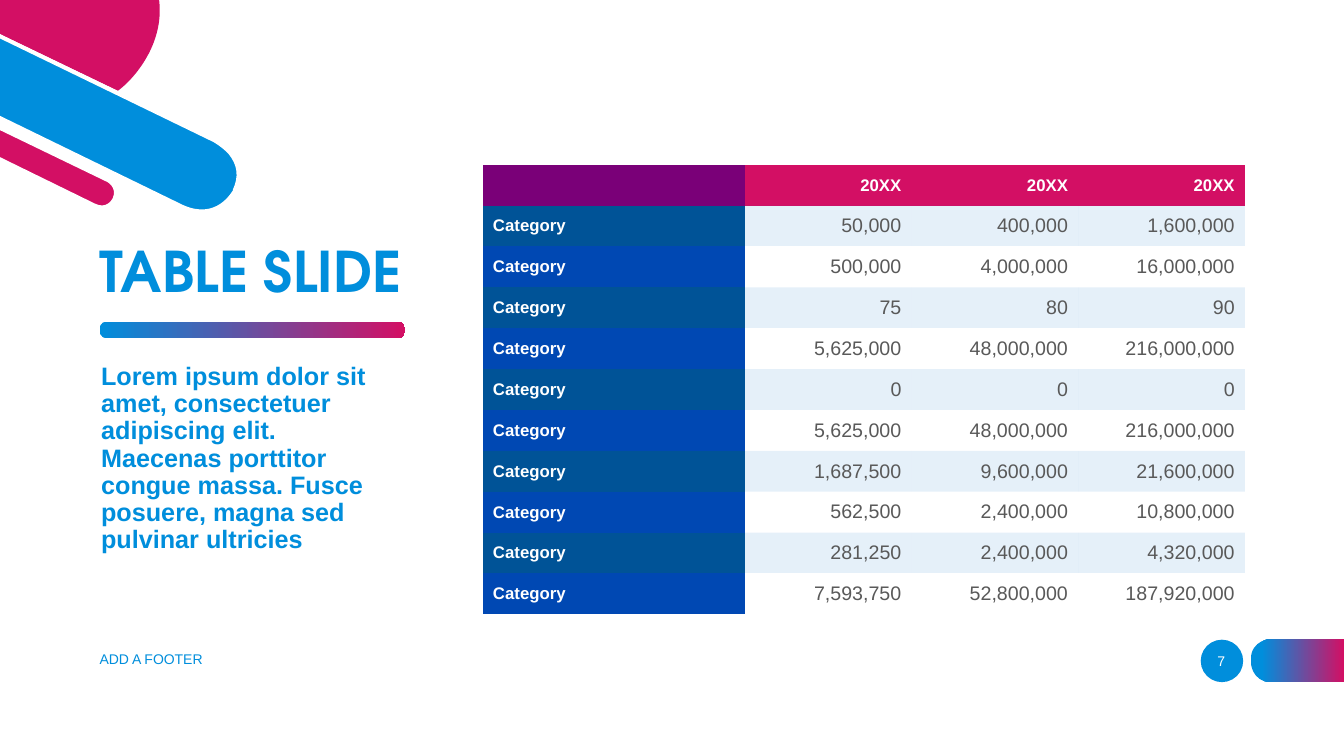
from dataclasses import dataclass
from typing import Optional

from lxml.etree import Element, SubElement
from pptx import Presentation
from pptx.dml.color import RGBColor
from pptx.dml.fill import FillFormat
from pptx.enum.shapes import MSO_SHAPE as Preset
from pptx.enum.text import MSO_ANCHOR as Anchor, PP_ALIGN as Align
from pptx.oxml.ns import qn
from pptx.util import Cm, Pt

COLOURS = {
    "blue": "008EDC", "crimson": "D30F64", "white": "FFFFFF", "purple": "7A0078",
    "teal": "005397", "royal": "0048B3", "tint": "006FC9", "grey": "595959",
}
NO_GRID_STYLE = "{2D5ABB26-0587-4C30-8999-92F81FD0307C}"


@dataclass
class Outline:
    """Steps in cm: two numbers draw a line, six a cubic curve."""
    start: tuple
    steps: list
    colour: Optional[str] = None  # None gives the blue to crimson gradient


@dataclass
class Label:
    text: str
    box: tuple  # left, top, width, height in cm
    size: int
    colour: Optional[str] = "blue"
    bold: bool = False
    font: str = "Arial"
    anchor: Anchor = Anchor.MIDDLE
    align: Align = Align.LEFT
    line_spacing: float = 1.0
    space_before: int = 0


CORNER = [
    # Blue bar
    Outline((5.38, 3.53), [
        (5.38, 3.53, 6.32, 3.99, 5.92, 4.8), (5.89, 4.83),
        (5.89, 4.83, 5.49, 5.64, 4.57, 5.18), (0, 2.97), (0, 0.91)], "blue"),
    # Crimson disc
    Outline((3.71, 1.42), [
        (3.71, 1.42, 3.45, 1.93, 2.97, 2.29), (0, 0.86), (0, 0), (4.01, 0),
        (4.06, 0.38, 4.01, 0.84, 3.75, 1.35)], "crimson"),
    # Crimson bar
    Outline((0, 3.2), [
        (2.69, 4.52), (2.69, 4.52, 3.05, 4.7, 2.9, 5), (2.9, 5.03),
        (2.9, 5.03, 2.72, 5.36, 2.36, 5.18), (0, 4.01)], "crimson"),
    # White rim of the crimson bar
    Outline((2.39, 5.13), [
        (2.69, 5.28, 2.82, 5.03, 2.84, 5), (2.97, 4.72, 2.69, 4.57, 2.67, 4.57),
        (0, 3.28), (0, 3.15), (2.72, 4.47),
        (2.72, 4.47, 2.92, 4.57, 2.97, 4.75), (3, 4.85, 3, 4.95, 2.95, 5.05),
        (2.9, 5.16, 2.77, 5.28, 2.57, 5.28), (2.51, 5.28, 2.44, 5.28, 2.36, 5.23),
        (0, 4.09), (0, 3.96)], "white"),
    # White rim of the blue bar
    Outline((4.6, 5.16), [
        (5.46, 5.56, 5.84, 4.83, 5.87, 4.8), (5.87, 4.78),
        (6.02, 4.45, 5.99, 4.17, 5.77, 3.89), (5.61, 3.71, 5.38, 3.58, 5.38, 3.58),
        (0, 0.97), (0, 0.86), (5.44, 3.48),
        (5.44, 3.51, 5.89, 3.71, 6.02, 4.14), (6.1, 4.34, 6.07, 4.57, 5.97, 4.83),
        (5.94, 4.85), (5.94, 4.85, 5.66, 5.38, 5.11, 5.38),
        (4.93, 5.38, 4.75, 5.33, 4.55, 5.23), (0, 3.02), (0, 2.92)], "white"),
]
NUMBER_TAB = Outline((32.05, 17.19), [
    (33.87, 17.19), (33.87, 16.1), (32.05, 16.1),
    (32.05, 16.1, 31.52, 16.1, 31.52, 16.64), (31.52, 16.66),
    (31.52, 16.66, 31.52, 17.19, 32.05, 17.19)])

LABELS = [
    Label("TABLE SLIDE", (2.26, 5.92, 9.45, 1.88), 40, None, True,
          "TeX Gyre Adventor", Anchor.BOTTOM, line_spacing=0.9),
    Label("Lorem ipsum dolor sit amet, consectetuer adipiscing elit. Maecenas "
          "porttitor congue massa. Fusce posuere, magna sed pulvinar ultricies",
          (2.3, 9.04, 7.85, 5.13), 18, bold=True, anchor=Anchor.TOP,
          line_spacing=0.9, space_before=10),
    Label("ADD A FOOTER", (2.26, 16.1, 11.43, 1.02), 10),
    Label("7", (30.02, 16.15, 1.52, 1.02), 10, "white", align=Align.CENTER),
]

ROWS = [
    ("", "20XX", "20XX", "20XX"),
    ("Category", "50,000", "400,000", "1,600,000"),
    ("Category", "500,000", "4,000,000", "16,000,000"),
    ("Category", "75", "80", "90"),
    ("Category", "5,625,000", "48,000,000", "216,000,000"),
    ("Category", "0", "0", "0"),
    ("Category", "5,625,000", "48,000,000", "216,000,000"),
    ("Category", "1,687,500", "9,600,000", "21,600,000"),
    ("Category", "562,500", "2,400,000", "10,800,000"),
    ("Category", "281,250", "2,400,000", "4,320,000"),
    ("Category", "7,593,750", "52,800,000", "187,920,000"),
]
COLUMN_WIDTHS = [6.6, 4.2, 4.2, 4.2]
ROW_HEIGHT = 1.03


def paint(fill: FillFormat, colour: Optional[str], blue_until: float = 0) -> None:
    if colour:
        fill.solid()
        fill.fore_color.rgb = RGBColor.from_string(COLOURS[colour])
        return
    fill.gradient()
    fill.gradient_angle = 0
    stops = zip(fill.gradient_stops, ("blue", "crimson"), (blue_until, 1))
    for stop, name, position in stops:
        stop.color.rgb = RGBColor.from_string(COLOURS[name])
        stop.position = position


def finish(shape, colour: Optional[str], blue_until: float = 0) -> None:
    paint(shape.fill, colour, blue_until)
    shape.line.fill.background()
    shape.shadow.inherit = False


def draw_outline(slide, outline: Outline, blue_until: float = 0) -> None:
    builder = slide.shapes.build_freeform(*map(Cm, outline.start), scale=1.0)
    builder.add_line_segments(
        [tuple(map(Cm, step[-2:])) for step in outline.steps], close=True)
    shape = builder.convert_to_shape()
    # Turn the lines of six-number steps into curves
    segments = list(shape.element.iter(qn("a:lnTo")))
    for segment, step in zip(segments, outline.steps):
        if len(step) == 6:
            segment.tag = qn("a:cubicBezTo")
            for index in (0, 1):
                x, y = step[2 * index:2 * index + 2]
                control = Element(qn("a:pt"), x=str(Cm(x) - shape.left),
                                  y=str(Cm(y) - shape.top))
                segment.insert(index, control)
    finish(shape, outline.colour, blue_until)


def format_runs(paragraph, size: int, colour: Optional[str], bold: bool,
                font: str = "Arial") -> None:
    for run in paragraph.runs:
        run.font.size, run.font.bold, run.font.name = Pt(size), bold, font
        paint(run.font.fill, colour)


def draw_label(slide, label: Label) -> None:
    text_frame = slide.shapes.add_textbox(*map(Cm, label.box)).text_frame
    text_frame.word_wrap = True
    text_frame.vertical_anchor = label.anchor
    text_frame.text = label.text
    paragraph = text_frame.paragraphs[0]
    paragraph.alignment = label.align
    paragraph.line_spacing = label.line_spacing
    paragraph.space_before = Pt(label.space_before)
    format_runs(paragraph, label.size, label.colour, label.bold, label.font)


def cell_colour(row: int, column: int) -> str:
    if row == 0:
        return "crimson" if column else "purple"
    if column == 0:
        return "teal" if row % 2 else "royal"
    return "tint" if row % 2 else "white"


def draw_table(slide) -> None:
    frame = slide.shapes.add_table(
        len(ROWS), len(COLUMN_WIDTHS), Cm(12.17), Cm(4.15),
        Cm(sum(COLUMN_WIDTHS)), Cm(ROW_HEIGHT * len(ROWS)))
    table = frame.table
    next(frame.element.iter(qn("a:tableStyleId"))).text = NO_GRID_STYLE
    for column, width in zip(table.columns, COLUMN_WIDTHS):
        column.width = Cm(width)
    for row, values in enumerate(ROWS):
        table.rows[row].height = Cm(ROW_HEIGHT)
        for column, value in enumerate(values):
            cell = table.cell(row, column)
            colour = cell_colour(row, column)
            paint(cell.fill, colour)
            if colour == "tint":
                tint = next(cell._tc.tcPr.iter(qn("a:srgbClr")))
                SubElement(tint, qn("a:alpha")).set("val", "10000")
            cell.vertical_anchor = Anchor.MIDDLE
            cell.text_frame.text = value
            paragraph = cell.text_frame.paragraphs[0]
            paragraph.alignment = Align.RIGHT if column else Align.LEFT
            is_heading = row == 0 or column == 0
            format_runs(paragraph, 12 if is_heading else 14,
                        "white" if is_heading else "grey", is_heading)


def main() -> None:
    presentation = Presentation()
    presentation.slide_width, presentation.slide_height = Cm(33.87), Cm(19.05)
    slide = presentation.slides.add_slide(presentation.slide_layouts[6])

    # Page number badge and tab
    badge = slide.shapes.add_shape(Preset.OVAL, Cm(30.26), Cm(16.12), Cm(1.07), Cm(1.07))
    finish(badge, "blue")
    draw_outline(slide, NUMBER_TAB, blue_until=0.12)

    # Corner decoration
    for outline in CORNER:
        draw_outline(slide, outline)

    # Rule under the title
    rule = slide.shapes.add_shape(
        Preset.ROUNDED_RECTANGLE, Cm(2.51), Cm(8.11), Cm(7.7), Cm(0.41))
    rule.adjustments[0] = 0.42
    finish(rule, None)

    # Table and texts
    draw_table(slide)
    for label in LABELS:
        draw_label(slide, label)

    presentation.save("out.pptx")


if __name__ == "__main__":
    main()
